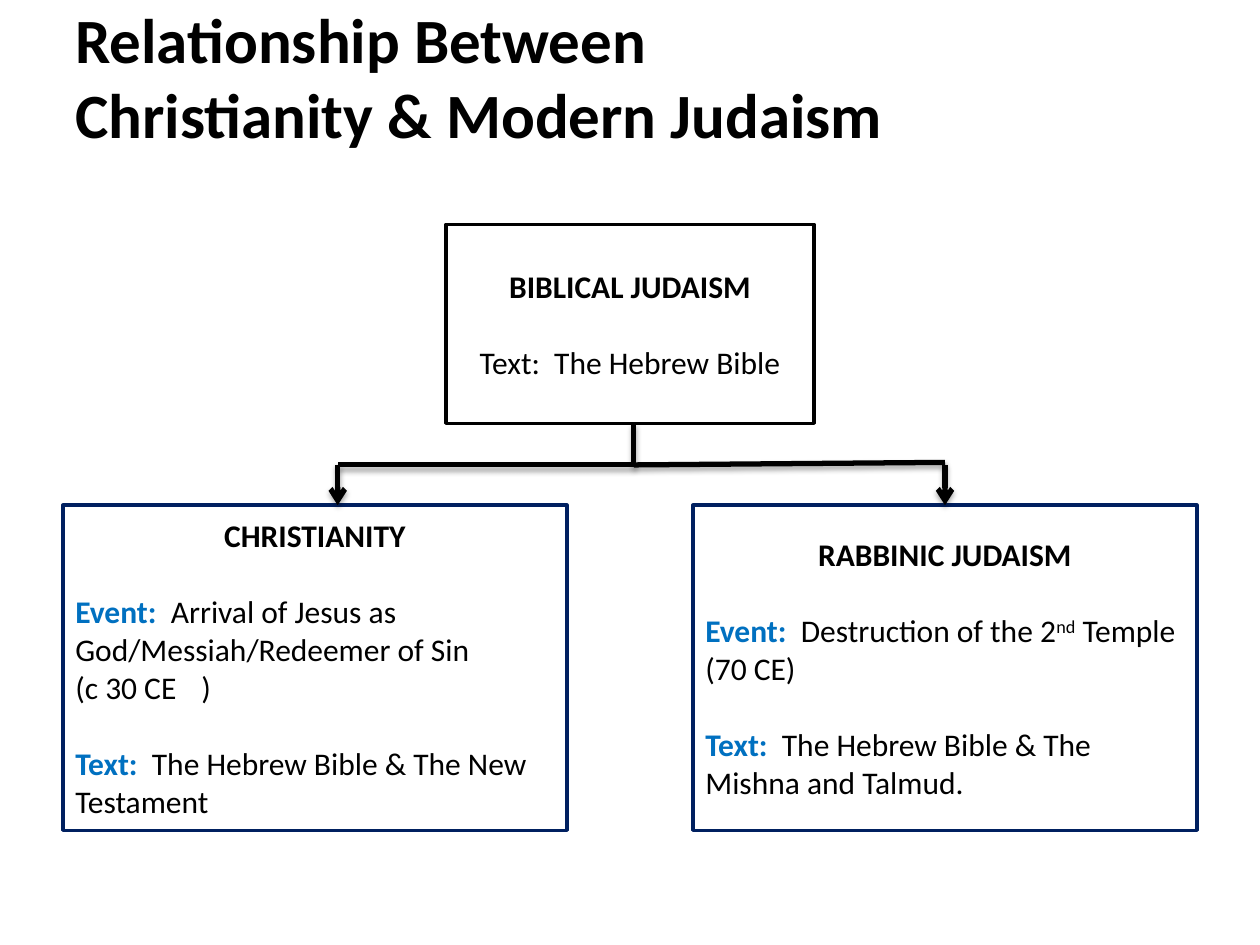
import pptx
import pptx.dml.color
import pptx.enum.shapes
import pptx.enum.text
import pptx.oxml
import pptx.oxml.ns
import pptx.util

Inches = pptx.util.Inches
Pt = pptx.util.Pt
COLORS = {"ink": "000000", "paper": "FFFFFF", "navy": "002060", "label": "0070C0"}
ALIGN = pptx.enum.text.PP_ALIGN
ANCHOR = pptx.enum.text.MSO_ANCHOR
CONNECTOR = pptx.enum.shapes.MSO_CONNECTOR


class Diagram:
    """Draws the titles, boxes and connectors of one page in a shared style."""

    font = "Calibri"
    size = 18
    gap = 22

    def __init__(self, page):
        self.page = page

    def color(self, name):
        return pptx.dml.color.RGBColor.from_string(COLORS[name])

    def span(self, para, text, size=None, bold=False, color="ink", raised=False):
        span = para.add_run()
        span.text = text
        span.font.name = self.font
        span.font.size = Pt(size or self.size)
        span.font.bold = bold
        span.font.color.rgb = self.color(color)
        if raised:
            span.font._element.set("baseline", "30000")

    def title(self, lines, left, top, width, height):
        box = self.page.shapes.add_textbox(*map(Inches, (left, top, width, height)))
        frame = box.text_frame
        frame.word_wrap = True
        frame.vertical_anchor = ANCHOR.BOTTOM
        para = frame.paragraphs[0]
        for index, line in enumerate(lines):
            if index:
                para.add_line_break()
            self.span(para, line, size=36, bold=True)

    def box(self, heading, entries, left, top, width, height, border="navy", align=ALIGN.LEFT):
        box = self.page.shapes.add_shape(
            pptx.enum.shapes.MSO_SHAPE.RECTANGLE, *map(Inches, (left, top, width, height)))
        box.shadow.inherit = False
        box.fill.solid()
        box.fill.fore_color.rgb = self.color("paper")
        box.line.color.rgb = self.color(border)
        box.line.width = Pt(2)
        frame = box.text_frame
        frame.word_wrap = True
        frame.vertical_anchor = ANCHOR.MIDDLE
        para = frame.paragraphs[0]
        para.alignment = ALIGN.CENTER
        self.span(para, heading, bold=True)
        for spaced, label, parts in entries:
            para = frame.add_paragraph()
            para.alignment = align
            if spaced:
                para.space_before = Pt(self.gap)
            if label:
                self.span(para, label, bold=True, color="label")
            for text, raised in parts:
                self.span(para, text, raised=raised)

    def connector(self, start, end, kind=CONNECTOR.STRAIGHT, arrow=False):
        line = self.page.shapes.add_connector(kind, *map(Inches, start + end))
        line.line.color.rgb = self.color("ink")
        line.line.width = Pt(3)
        namespace = pptx.oxml.ns.nsdecls("a")
        properties = line._element.spPr
        if arrow:
            properties.find(pptx.oxml.ns.qn("a:ln")).append(
                pptx.oxml.parse_xml(f'<a:tailEnd {namespace} type="arrow"/>'))
        if kind == CONNECTOR.ELBOW:
            guides = properties.find(".//" + pptx.oxml.ns.qn("a:avLst"))
            guides.append(pptx.oxml.parse_xml(f'<a:gd {namespace} name="adj1" fmla="val 0"/>'))
        properties.append(pptx.oxml.parse_xml(
            f'<a:effectLst {namespace}><a:outerShdw blurRad="{Pt(3.1)}" dist="{Pt(1.8)}" '
            f'dir="5400000" rotWithShape="0"><a:srgbClr val="{COLORS["ink"]}">'
            '<a:alpha val="35000"/></a:srgbClr></a:outerShdw></a:effectLst>'))


def main():
    deck = pptx.Presentation()
    deck.slide_width, deck.slide_height = Inches(10), Inches(7.5)
    diagram = Diagram(deck.slides.add_slide(deck.slide_layouts[6]))

    diagram.box("BIBLICAL JUDAISM", [(True, "", [("Text:  The Hebrew Bible", False)])],
                3.54, 1.78, 2.92, 1.58, border="ink", align=ALIGN.CENTER)

    branches = [
        ("CHRISTIANITY", 0.5, [
            (True, "Event:  ", [("Arrival of Jesus as God/Messiah/Redeemer of Sin", False)]),
            (False, "", [("(c 30 CE\t)", False)]),
            (True, "Text:  ", [("The Hebrew Bible & The New Testament", False)]),
        ]),
        ("RABBINIC JUDAISM", 5.5, [
            (True, "Event:  ", [("Destruction of the 2", False), ("nd", True),
                                (" Temple (70 CE)", False)]),
            (True, "Text:  ", [("The Hebrew Bible & The Mishna and Talmud.", False)]),
        ]),
    ]
    for heading, left, entries in branches:
        diagram.box(heading, entries, left, 4.01, 4, 2.58)

    trunk, fork, christian, rabbinic = 5.03, 3.69, 2.68, 7.5
    diagram.connector((trunk, 3.36), (christian, fork), kind=CONNECTOR.ELBOW)
    diagram.connector((trunk, fork), (rabbinic, 3.67))
    for column in (christian, rabbinic):
        diagram.connector((column, fork), (column, 4.01), arrow=True)

    diagram.title(["Relationship Between", "Christianity & Modern Judaism"],
                  0.5, 0.08, 8.33, 1.17)
    deck.save("out.pptx")


if __name__ == "__main__":
    main()
